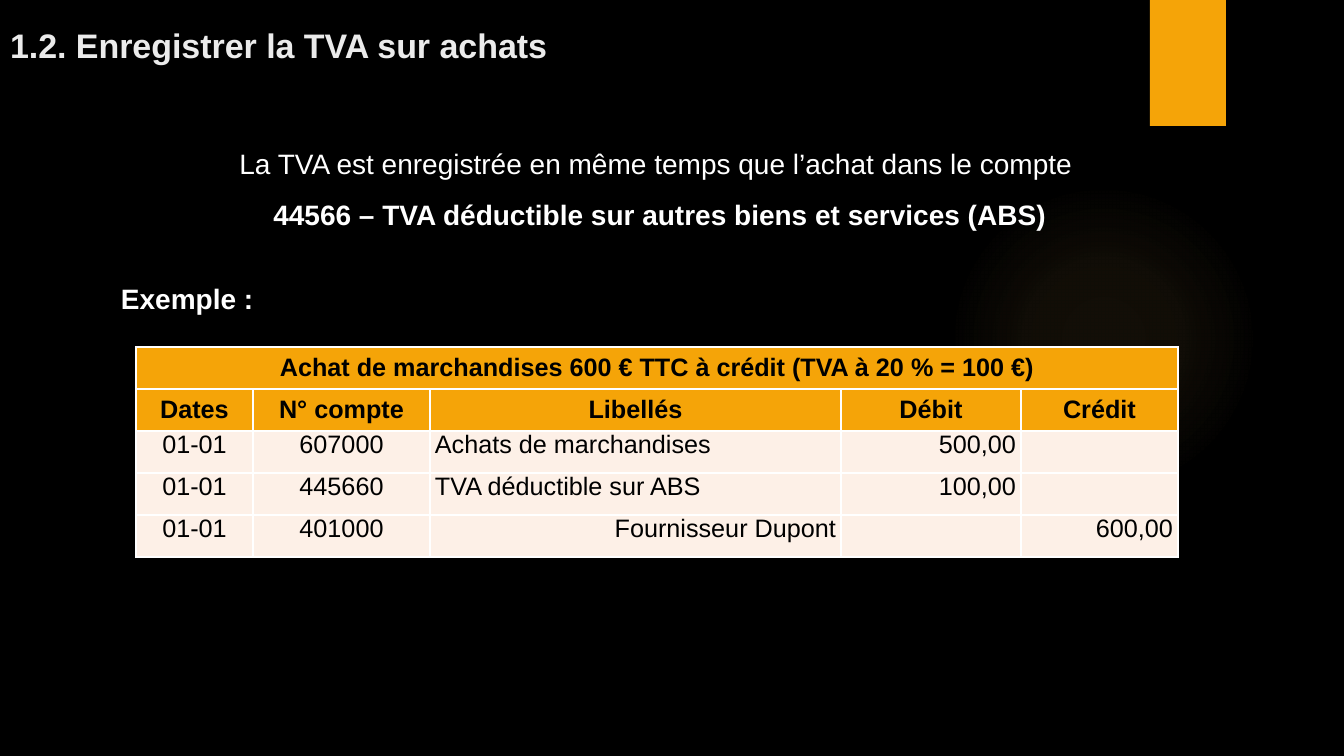
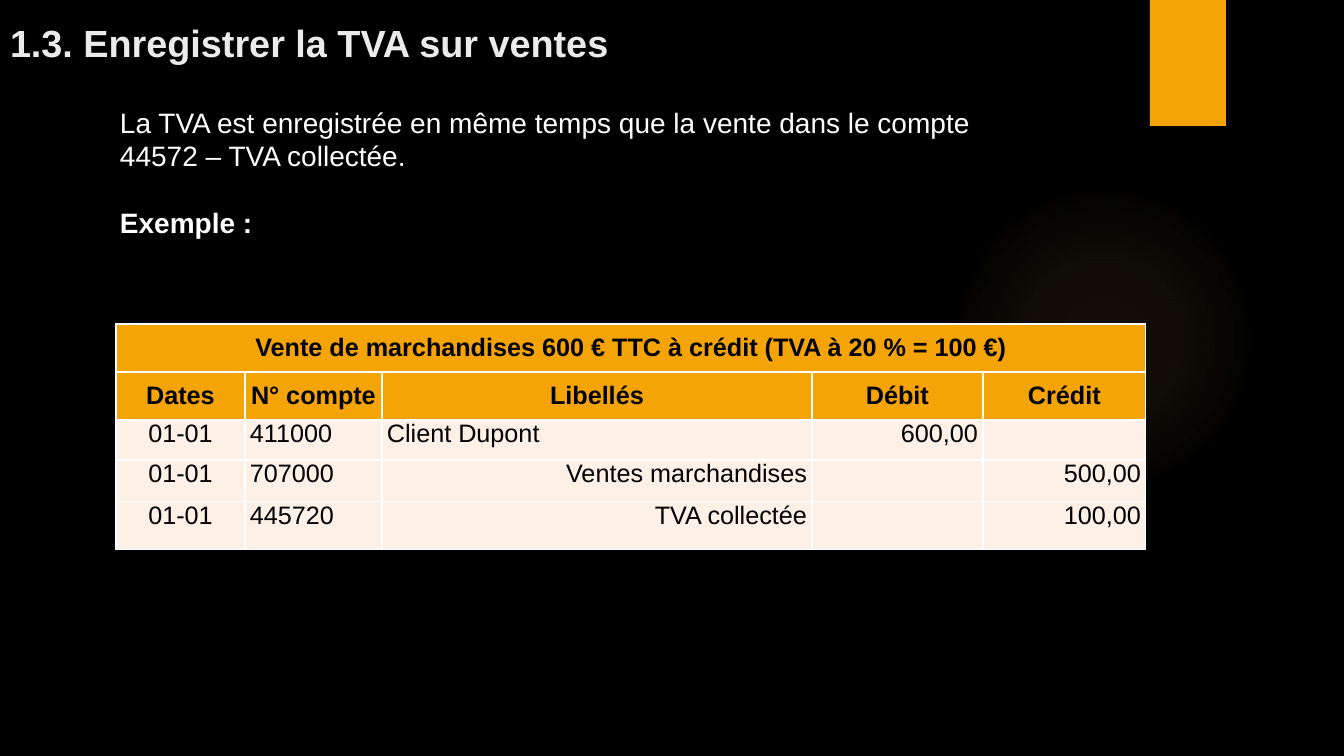
import lxml.etree
import pptx
import pptx.dml.color
import pptx.enum.shapes
import pptx.enum.text
import pptx.oxml.ns
import pptx.util

SCALE = 12192000 / 1344
ALIGN = pptx.enum.text.PP_ALIGN
ANCHOR = pptx.enum.text.MSO_ANCHOR
SHAPE = pptx.enum.shapes.MSO_SHAPE
BLACK, WHITE, TITLE_GREY = "000000", "FFFFFF", "EBEBEB"
ORANGE, CREAM, GLOW = "F5A408", "FDF0E7", "FAC96A"
TITLE_BOX = (0, 0, 1164, 70)
GLOW_BOX = (949, 184, 310, 310)
TAB_BOX = (1150, 0, 76, 126)
GLOW_STOPS = ((0, 7), (36, 6), (69, 0))
HEADINGS = ("Dates", "N° compte", "Libellés", "Débit", "Crédit")


def px(length):
    """Turn pixels into EMU."""
    return pptx.util.Emu(round(length * SCALE))


def color(code):
    """Turn a hex string into a colour."""
    return pptx.dml.color.RGBColor.from_string(code)


def apply(target, values):
    """Set each attribute named in a dict of format values."""
    for name, value in values.items():
        setattr(target, name, value)


def node(parent, tag, **attributes):
    """Append a DrawingML element to a parent."""
    return lxml.etree.SubElement(parent, pptx.oxml.ns.qn("a:" + tag), attributes)


def paint(item, code):
    """Fill an item with one solid colour."""
    item.fill.solid()
    item.fill.fore_color.rgb = color(code)


def write(para, text, size, code, bold=False, **layout):
    """Put one formatted span into a paragraph."""
    apply(para, layout)
    span = para.add_run()
    span.text = text
    apply(span.font, {"name": "Arial", "size": pptx.util.Pt(size), "bold": bold})
    span.font.color.rgb = color(code)


def add_box(page, box, anchor, inset_top=5):
    """Add a wrapping text box and return its text frame."""
    frame = page.shapes.add_textbox(*map(px, box)).text_frame
    apply(frame, {
        "word_wrap": True, "vertical_anchor": anchor,
        "margin_left": px(10), "margin_right": px(10),
        "margin_top": px(inset_top), "margin_bottom": px(5),
    })
    return frame


def add_plain_shape(page, kind, box):
    """Add a preset shape without line or shadow."""
    shape = page.shapes.add_shape(kind, *map(px, box))
    shape.shadow.inherit = False
    shape.line.fill.background()
    return shape


def add_glow(page, box):
    """Add the faint radial glow."""
    glow = add_plain_shape(page, SHAPE.OVAL, box)
    glow.fill.gradient()
    gradient = glow.fill._xPr.find(pptx.oxml.ns.qn("a:gradFill"))
    for child in list(gradient):
        gradient.remove(child)
    stops = node(gradient, "gsLst")
    for position, opacity in GLOW_STOPS:
        stop = node(stops, "gs", pos=str(position * 1000))
        node(node(stop, "srgbClr", val=GLOW), "alpha", val=str(opacity * 1000))
    center = dict.fromkeys("ltrb", "50000")
    node(node(gradient, "path", path="circle"), "fillToRect", **center)


def add_page(deck, title, title_size):
    """Add a page with the shared background, decoration and title."""
    page = deck.slides.add_slide(deck.slide_layouts[6])
    paint(page.background, BLACK)
    add_glow(page, GLOW_BOX)
    paint(add_plain_shape(page, SHAPE.RECTANGLE, TAB_BOX), ORANGE)
    frame = add_box(page, TITLE_BOX, ANCHOR.BOTTOM)
    write(frame.paragraphs[0], title, title_size, TITLE_GREY, bold=True)
    return page


def add_body(page, box, inset_top, lines):
    """Add body lines given as text, bold, alignment and space before."""
    frame = add_box(page, box, ANCHOR.TOP, inset_top)
    for index, (text, bold, alignment, gap) in enumerate(lines):
        para = frame.add_paragraph() if index else frame.paragraphs[0]
        write(para, text, 20, WHITE, bold, alignment=alignment,
              space_before=pptx.util.Pt(gap), line_spacing=pptx.util.Pt(24))


def style_cell(cell, fill, anchor):
    """Give a cell its margins, white borders and fill."""
    apply(cell, {
        "margin_left": px(5), "margin_right": px(5),
        "margin_top": 0, "margin_bottom": 0, "vertical_anchor": anchor,
    })
    properties = cell._tc.get_or_add_tcPr()
    for side in ("lnL", "lnR", "lnT", "lnB"):
        border = node(properties, side, w="12700")
        node(node(border, "solidFill"), "srgbClr", val=WHITE)
    paint(cell, fill)


def add_journal(page, origin, widths, heights, caption, entries, account_align):
    """Add a journal table; labels of credited accounts go to the right."""
    box = (*origin, sum(widths), sum(heights))
    grid = page.shapes.add_table(len(heights), len(widths), *map(px, box)).table
    for column, width in zip(grid.columns, widths):
        column.width = px(width)
    for row, height in zip(grid.rows, heights):
        row.height = px(height)
    grid.cell(0, 0).merge(grid.cell(0, len(widths) - 1))
    for row_index, values in enumerate([(caption,), HEADINGS, *entries]):
        heading = row_index < 2
        label_align = ALIGN.RIGHT if values[-1] else ALIGN.LEFT
        aligns = (ALIGN.CENTER, account_align, label_align, ALIGN.RIGHT, ALIGN.RIGHT)
        for column_index, alignment in enumerate(aligns):
            cell = grid.cell(row_index, column_index)
            style_cell(cell, ORANGE if heading else CREAM,
                       ANCHOR.MIDDLE if heading else ANCHOR.TOP)
            if column_index < len(values) and values[column_index]:
                write(cell.text_frame.paragraphs[0], values[column_index], 18, BLACK,
                      heading, alignment=ALIGN.CENTER if heading else alignment)


def build_purchases(deck):
    """Build the page on VAT on purchases."""
    page = add_page(deck, "1.2. Enregistrer la TVA sur achats", 24.3)
    add_journal(
        page, (136, 347), (117, 177, 411, 180, 157), (42,) * 5,
        "Achat de marchandises 600 € TTC à crédit (TVA à 20 % = 100 €)",
        [("01-01", "607000", "Achats de marchandises", "500,00", ""),
         ("01-01", "445660", "TVA déductible sur ABS", "100,00", ""),
         ("01-01", "401000", "Fournisseur Dupont", "", "600,00")],
        ALIGN.CENTER)
    add_body(page, (111, 130, 1098, 229), 17, [
        ("La TVA est enregistrée en même temps que l’achat dans le compte ",
         False, ALIGN.CENTER, 0),
        ("44566 – TVA déductible sur autres biens et services (ABS)",
         True, ALIGN.CENTER, 12),
        ("Exemple :", True, ALIGN.LEFT, 36)])


def build_sales(deck):
    """Build the page on VAT on sales."""
    page = add_page(deck, "1.3. Enregistrer la TVA sur ventes", 27)
    add_journal(
        page, (116, 324), (129, 137, 430, 171, 163), (48, 48, 40, 42, 48),
        "Vente de marchandises 600 € TTC à crédit (TVA à 20 % = 100 €)",
        [("01-01", "411000", "Client Dupont", "600,00", ""),
         ("01-01", "707000", "Ventes marchandises", "", "500,00"),
         ("01-01", "445720", "TVA collectée", "", "100,00")],
        ALIGN.LEFT)
    add_body(page, (110, 100, 1031, 179), 5, [
        ("La TVA est enregistrée en même temps que la vente dans le compte",
         False, ALIGN.LEFT, 0),
        ("44572 – TVA collectée.", False, ALIGN.LEFT, 0),
        ("Exemple :", True, ALIGN.LEFT, 24)])


def main():
    """Build and save the deck."""
    deck = pptx.Presentation()
    apply(deck, {"slide_width": px(1344), "slide_height": px(756)})
    build_purchases(deck)
    build_sales(deck)
    deck.save("out.pptx")


if __name__ == "__main__":
    main()
